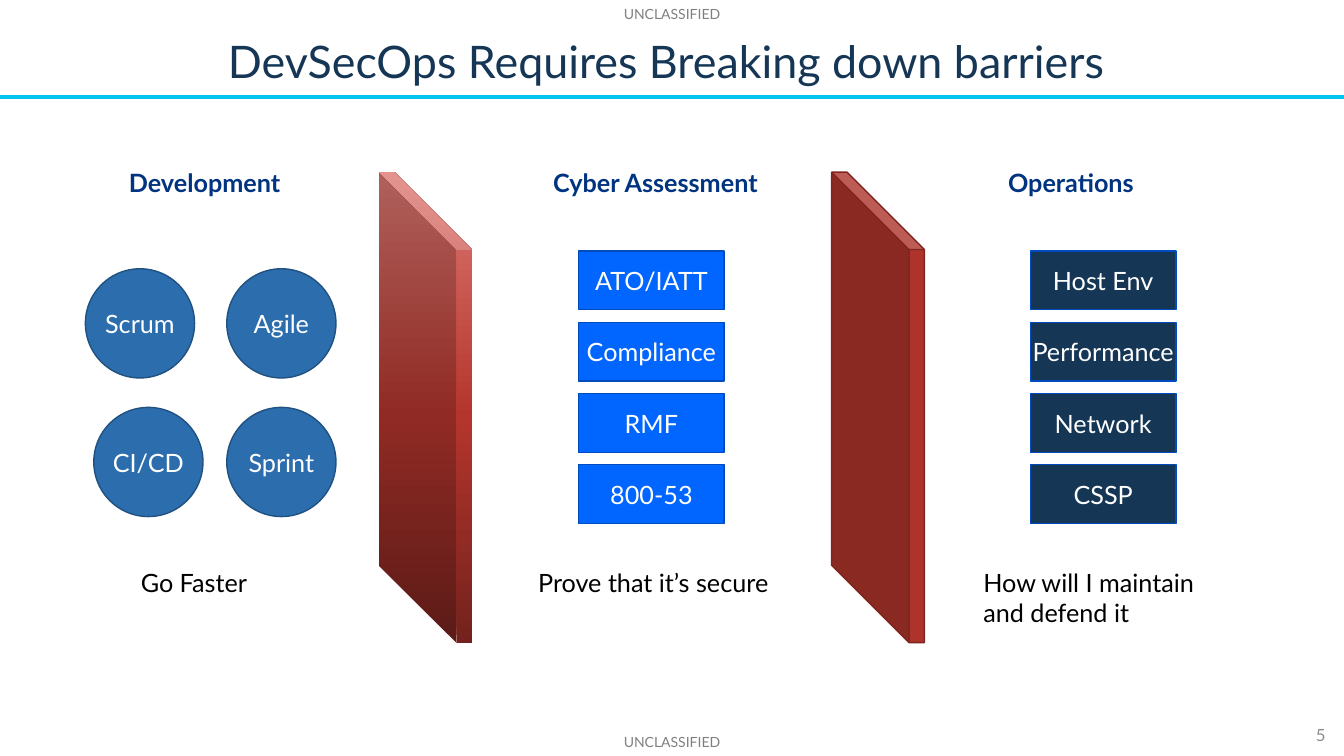
from copy import deepcopy

from lxml.etree import SubElement
from pptx import Presentation
from pptx.dml.color import RGBColor
from pptx.enum.shapes import MSO_CONNECTOR, MSO_SHAPE
from pptx.enum.text import MSO_ANCHOR, PP_ALIGN
from pptx.oxml.ns import qn
from pptx.util import Pt

FONT = "Lato"
WHITE = RGBColor(0xFF, 0xFF, 0xFF)
BLACK = RGBColor(0x00, 0x00, 0x00)
MARKING_GRAY = RGBColor(0x80, 0x80, 0x80)
NUMBER_GRAY = RGBColor(0x8C, 0x8C, 0x8C)
CYAN = RGBColor(0x00, 0xC4, 0xEC)
NAVY = RGBColor(0x16, 0x36, 0x56)
HEADING_BLUE = RGBColor(0x00, 0x33, 0x80)
CIRCLE_BLUE = RGBColor(0x2B, 0x6D, 0xAD)
CIRCLE_EDGE = RGBColor(0x20, 0x51, 0x80)
BRIGHT_BLUE = RGBColor(0x00, 0x66, 0xFF)
BOX_EDGE = RGBColor(0x00, 0x4B, 0xBD)
WALL_RED = RGBColor(0xAD, 0x33, 0x2B)
WALL_EDGE = RGBColor(0x80, 0x26, 0x20)
WALL_SHADES = (
    (0, RGBColor(0x74, 0x22, 0x1D)),
    (0.48, RGBColor(0xB4, 0x35, 0x2D)),
    (1, RGBColor(0xDC, 0x78, 0x72)),
)


class SlideBuilder:
    """Adds styled elements to one slide, with all lengths in points."""

    def __init__(self, page):
        self.page = page

    def fill_text(self, frame, text, size, color, align=PP_ALIGN.LEFT, bold=False, inset=None):
        frame.text = text
        frame.word_wrap = True
        if inset is not None:
            frame.margin_left = frame.margin_right = Pt(inset)
            frame.margin_top = frame.margin_bottom = Pt(inset)
        para = frame.paragraphs[0]
        para.alignment = align
        for span in para.runs:
            span.font.name = FONT
            span.font.size = Pt(size)
            span.font.bold = bold
            span.font.color.rgb = color
        return para

    def title(self, text, left, top, width, height):
        box = self.page.shapes.title
        box.left, box.top, box.width, box.height = Pt(left), Pt(top), Pt(width), Pt(height)
        box.text_frame.vertical_anchor = MSO_ANCHOR.MIDDLE
        self.fill_text(box.text_frame, text, 32, NAVY).line_spacing = 0.9

    def text(self, text, left, top, width, height, size=18, color=BLACK,
             anchor=MSO_ANCHOR.TOP, **style):
        box = self.page.shapes.add_textbox(Pt(left), Pt(top), Pt(width), Pt(height))
        box.text_frame.vertical_anchor = anchor
        return self.fill_text(box.text_frame, text, size, color, **style)

    def marking(self, top):
        para = self.text("UNCLASSIFIED", 0, top, 960, 11.5, 10, MARKING_GRAY,
                         align=PP_ALIGN.CENTER, inset=0)
        para.line_spacing = 0.93

    def rule(self, top):
        line = self.page.shapes.add_connector(
            MSO_CONNECTOR.STRAIGHT, Pt(0), Pt(top), Pt(960), Pt(top))
        line.line.color.rgb = CYAN
        line.line.width = Pt(3)
        SubElement(line._element.spPr, qn("a:effectLst"))

    def shape(self, kind, left, top, width, height, fill, edge):
        shape = self.page.shapes.add_shape(kind, Pt(left), Pt(top), Pt(width), Pt(height))
        shape.shadow.inherit = False
        shape.fill.solid()
        shape.fill.fore_color.rgb = fill
        shape.line.color.rgb = edge
        shape.line.width = Pt(1)
        return shape

    def label(self, text, kind, left, top, width, height, fill, edge):
        frame = self.shape(kind, left, top, width, height, fill, edge).text_frame
        frame.vertical_anchor = MSO_ANCHOR.MIDDLE
        self.fill_text(frame, text, 18, WHITE, PP_ALIGN.CENTER, inset=0)

    def wall(self, left, shaded=False):
        cube = self.shape(MSO_SHAPE.CUBE, left, 123, 66.3, 336, WALL_RED, WALL_EDGE)
        cube.adjustments[0] = 0.833
        cube._element.spPr.xfrm.set("flipH", "1")
        if shaded:
            cube.line.fill.background()
            cube.fill.gradient()
            cube.fill.gradient_angle = 90
            stops = cube._element.spPr.find(".//" + qn("a:gsLst"))
            stops.append(deepcopy(stops[0]))
            for stop, (position, color) in zip(cube.fill.gradient_stops, WALL_SHADES):
                stop.position = position
                stop.color.rgb = color

    def stack(self, labels, left, fill):
        for row, text in enumerate(labels):
            self.label(text, MSO_SHAPE.RECTANGLE, left, 179.3 + 50.9 * row,
                       104, 42, fill, BOX_EDGE)


def main():
    deck = Presentation()
    deck.slide_width, deck.slide_height = Pt(960), Pt(540)
    builder = SlideBuilder(deck.slides.add_slide(deck.slide_layouts[5]))

    builder.rule(69.3)
    builder.marking(5)
    builder.marking(525)
    builder.title("DevSecOps Requires Breaking down barriers", 155.5, 19.4, 798.5, 53.3)
    builder.text("5", 738, 510.5, 216, 28.8, 12, NUMBER_GRAY, MSO_ANCHOR.MIDDLE,
                 align=PP_ALIGN.RIGHT)

    builder.wall(270.7, shaded=True)
    builder.wall(594)

    circles = (("Scrum", 61, 192), ("Agile", 162, 192),
               ("CI/CD", 67, 291), ("Sprint", 162, 291))
    for text, left, top in circles:
        builder.label(text, MSO_SHAPE.OVAL, left, top, 78, 78, CIRCLE_BLUE, CIRCLE_EDGE)

    builder.stack(("ATO/IATT", "Compliance", "RMF", "800-53"), 413.3, BRIGHT_BLUE)
    builder.stack(("Host Env", "Performance", "Network", "CSSP"), 736, NAVY)

    for text, left, width in (("Development", 85, 136), ("Cyber Assessment", 388, 181),
                              ("Operations", 713, 115)):
        builder.text(text, left, 116, width, 29, color=HEADING_BLUE, bold=True)

    for text, left, width, height in (
            ("Go Faster", 93.5, 100, 29),
            ("Prove that it’s secure", 377.3, 190, 29),
            ("How will I maintain and defend it", 695.3, 181, 51)):
        builder.text(text, left, 401.5, width, height)

    deck.save("out.pptx")


if __name__ == "__main__":
    main()
